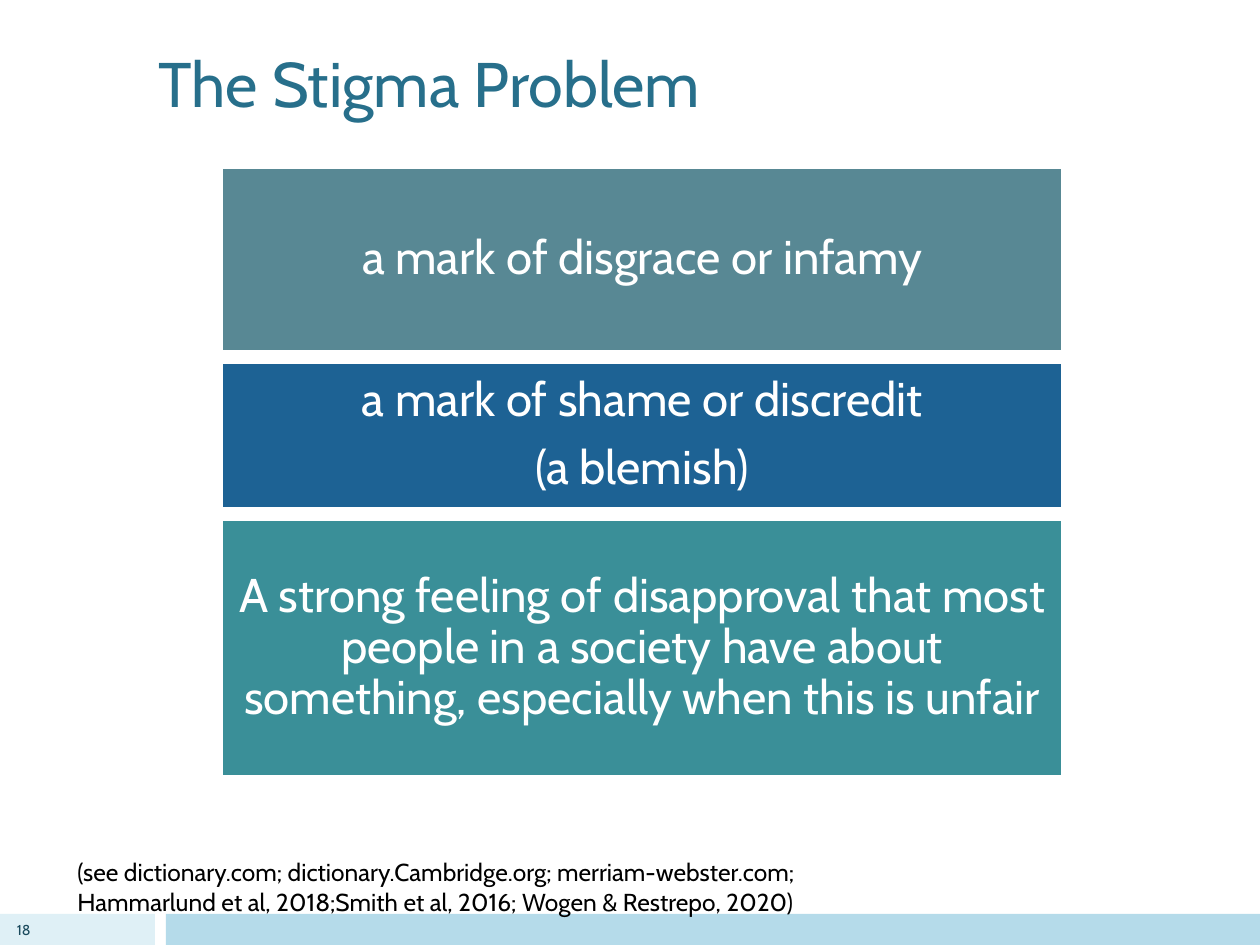
from dataclasses import dataclass

from pptx import Presentation
from pptx.dml.color import RGBColor
from pptx.enum.shapes import MSO_SHAPE
from pptx.enum.text import MSO_ANCHOR, PP_ALIGN
from pptx.util import Emu, Pt

RECTANGLE = MSO_SHAPE.RECTANGLE
TOP, MIDDLE = MSO_ANCHOR.TOP, MSO_ANCHOR.MIDDLE
LEFT, CENTER, RIGHT = PP_ALIGN.LEFT, PP_ALIGN.CENTER, PP_ALIGN.RIGHT

PX_PER_INCH = 126
PAGE_WIDTH, PAGE_HEIGHT = 1260, 945


@dataclass(frozen=True)
class Theme:
    font: str = "Cabin"
    title: str = "276F8B"
    ink: str = "000000"
    white: str = "FFFFFF"
    number: str = "1A4A5D"
    footer_light: str = "DFF0F6"
    footer_dark: str = "B5DBEA"
    banners: tuple = ("588894", "1D6294", "3A8F98")
    title_size: float = 36
    banner_size: float = 27
    source_size: float = 14
    number_size: float = 8.2


THEME = Theme()

DEFINITIONS = [
    (183, ["a mark of disgrace or infamy"]),
    (145, ["a mark of shame or discredit", "(a blemish)"]),
    (256, ["A strong feeling of disapproval that most people in a society "
           "have about something, especially when this is unfair"]),
]
SOURCES = [
    "(see dictionary.com; dictionary.Cambridge.org; merriam-webster.com;",
    "Hammarlund et al, 2018;Smith et al, 2016; Wogen & Restrepo, 2020)",
]


def px(length):
    return Emu(round(length * 914400 / PX_PER_INCH))


def add_rectangle(page, box, fill, line=None):
    shape = page.shapes.add_shape(RECTANGLE, *map(px, box))
    shape.shadow.inherit = False
    shape.fill.solid()
    shape.fill.fore_color.rgb = RGBColor.from_string(fill)
    if line:
        shape.line.color.rgb = RGBColor.from_string(line)
        shape.line.width = Pt(1)
    else:
        shape.line.fill.background()
    return shape


def set_text(shape, lines, size, color, align=LEFT, anchor=TOP, wrap=True):
    frame = shape.text_frame
    frame.word_wrap = wrap
    frame.vertical_anchor = anchor
    frame.text = "\n".join(lines)
    for para in frame.paragraphs:
        para.alignment = align
        para.font.name = THEME.font
        para.font.size = Pt(size)
        para.font.color.rgb = RGBColor.from_string(color)
    return frame


def add_text(page, box, lines, size, color, **layout):
    shape = page.shapes.add_textbox(*map(px, box))
    return set_text(shape, lines, size, color, **layout)


def add_footer(page, box, number):
    left, top, width, height = box
    number_panel, gap = 155, 11
    bar_left = left + number_panel + gap
    add_rectangle(page, (left, top, number_panel, height), THEME.footer_light)
    add_rectangle(page, (bar_left, top, left + width - bar_left, height),
                  THEME.footer_dark)
    add_text(page, (left, top, 43, height), [number], THEME.number_size,
             THEME.number, align=RIGHT, anchor=MIDDLE, wrap=False)


def add_definitions(page, box, definitions):
    """Stack one banner per definition, with equal gaps filling the box."""
    left, top, width, height = box
    spare = height - sum(banner_height for banner_height, _ in definitions)
    gap = spare // (len(definitions) - 1)
    for (banner_height, lines), fill in zip(definitions, THEME.banners):
        banner = add_rectangle(page, (left, top, width, banner_height), fill,
                               THEME.white)
        frame = set_text(banner, lines, THEME.banner_size, THEME.white,
                         align=CENTER, anchor=MIDDLE)
        frame.margin_left = frame.margin_right = px(9)
        frame.margin_top = frame.margin_bottom = px(9)
        for para in frame.paragraphs:
            para.line_spacing = 0.9
            para.space_after = Pt(9.5)
        top += banner_height + gap


def build_stigma_page(page):
    add_footer(page, (0, 914, PAGE_WIDTH, 31), "18")
    add_definitions(page, (222, 168, 840, 609), DEFINITIONS)
    add_text(page, (146, 38, 969, 163), ["The Stigma Problem"],
             THEME.title_size, THEME.title)
    add_text(page, (65, 851, 752, 72), SOURCES, THEME.source_size, THEME.ink,
             wrap=False)


def main():
    deck = Presentation()
    deck.slide_width, deck.slide_height = px(PAGE_WIDTH), px(PAGE_HEIGHT)
    build_stigma_page(deck.slides.add_slide(deck.slide_layouts[6]))
    deck.save("out.pptx")


if __name__ == "__main__":
    main()
